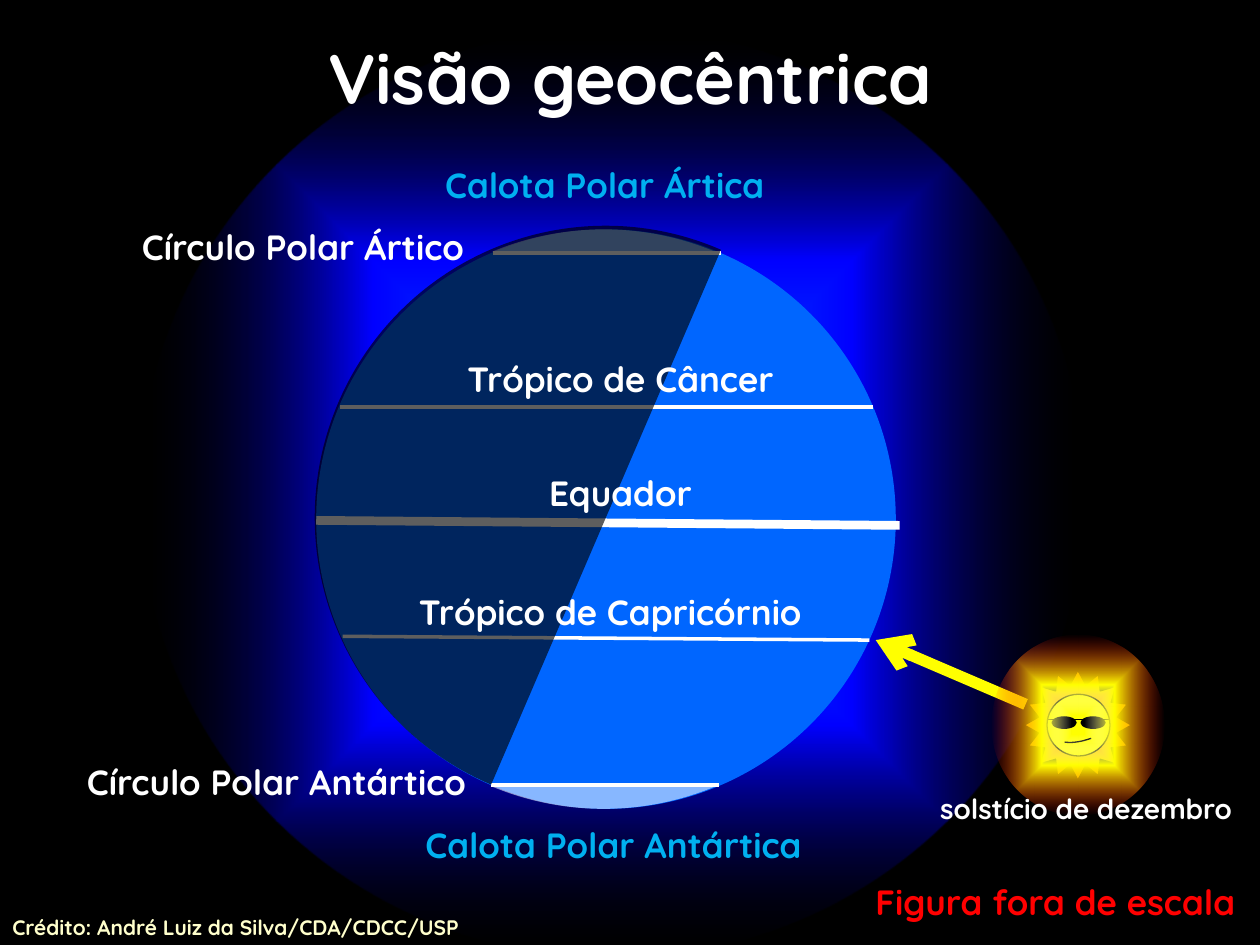
from lxml.etree import SubElement
from pptx import Presentation
from pptx.dml.color import RGBColor
from pptx.enum.shapes import MSO_CONNECTOR, MSO_SHAPE as SHAPE
from pptx.enum.text import MSO_ANCHOR as ANCHOR, MSO_AUTO_SIZE as AUTO, PP_ALIGN as ALIGN
from pptx.oxml.ns import qn
from pptx.util import Inches, Pt

BLACK = RGBColor(0, 0, 0)
WHITE = RGBColor(255, 255, 255)
OCEAN = RGBColor(0x00, 0x66, 0xFF)
BLUE = RGBColor(0, 0, 255)
SKY = RGBColor(0x00, 0xB0, 0xF0)
YELLOW = RGBColor(255, 255, 0)
AMBER = RGBColor(0xFF, 0xC0, 0x00)
RED = RGBColor(255, 0, 0)
CREAM = RGBColor(0xFF, 0xFF, 0xCC)


def set_alpha(color, percent):
    SubElement(color, qn("a:alpha"), val=str(percent * 1000))


class Sketch:
    font = "Quicksand"

    def __init__(self, page):
        self.page = page
        self.shapes = page.shapes

    def style_text(self, frame, text, size, color, align):
        frame.text = text
        para = frame.paragraphs[0]
        para.alignment = align
        para.font.name = self.font
        para.font.size = Pt(size)
        para.font.bold = True
        para.font.color.rgb = color

    def title(self, text, left, top, width, height):
        box = self.page.shapes.title
        box.left, box.top = Inches(left), Inches(top)
        box.width, box.height = Inches(width), Inches(height)
        box.text_frame.vertical_anchor = ANCHOR.MIDDLE
        self.style_text(box.text_frame, text, 40, WHITE, ALIGN.CENTER)
        # Bring the title in front of the sky glow
        self.page.shapes._spTree.append(box._element)

    def label(self, text, left, top, width=4.57, height=0.44, size=20,
              color=WHITE, align=ALIGN.CENTER):
        box = self.shapes.add_textbox(Inches(left), Inches(top), Inches(width), Inches(height))
        box.text_frame.word_wrap = True
        box.text_frame.auto_size = AUTO.SHAPE_TO_FIT_TEXT
        self.style_text(box.text_frame, text, size, color, align)

    def shape(self, kind, left, top, width, height, fill=None, alpha=None,
              outline=None, adjust=(), rotation=0):
        shape = self.shapes.add_shape(kind, Inches(left), Inches(top), Inches(width), Inches(height))
        shape.shadow.inherit = False
        shape.rotation = rotation
        for index, value in enumerate(adjust):
            shape.adjustments[index] = value
        if fill is None:
            shape.fill.background()
        else:
            shape.fill.solid()
            shape.fill.fore_color.rgb = fill
        if alpha is not None:
            set_alpha(shape._element.spPr.find(".//" + qn("a:srgbClr")), alpha)
        if outline is None:
            shape.line.fill.background()
        else:
            shape.line.color.rgb = outline
            shape.line.width = Pt(0.75)
        return shape

    def glow(self, left, top, width, height, stops):
        """Ellipse with a centred gradient; stops are (percent, colour, opacity)."""
        shape = self.shape(SHAPE.OVAL, left, top, width, height)
        properties = shape._element.spPr
        gradient = SubElement(properties, qn("a:gradFill"), rotWithShape="1")
        stop_list = SubElement(gradient, qn("a:gsLst"))
        for position, color, opacity in stops:
            stop = SubElement(stop_list, qn("a:gs"), pos=str(position * 1000))
            set_alpha(SubElement(stop, qn("a:srgbClr"), val=str(color)), opacity)
        route = SubElement(gradient, qn("a:path"), path="shape")
        SubElement(route, qn("a:fillToRect"), l="50000", t="50000", r="50000", b="50000")
        properties.replace(properties.find(qn("a:noFill")), gradient)

    def line(self, start, end, color=WHITE, width=2, arrow=False):
        points = [Inches(value) for value in (*start, *end)]
        line = self.shapes.add_connector(MSO_CONNECTOR.STRAIGHT, *points)
        line.line.color.rgb = color
        line.line.width = Pt(width)
        if arrow:
            SubElement(line.line._get_or_add_ln(), qn("a:tailEnd"), type="arrow")
        SubElement(line._element.spPr, qn("a:effectLst"))

    def curve(self, points, color, width, steps=12):
        """Open cubic Bézier curve through its four control points."""
        trace = []
        for step in range(steps + 1):
            t = step / steps
            weights = ((1 - t) ** 3, 3 * t * (1 - t) ** 2, 3 * t * t * (1 - t), t ** 3)
            trace.append(tuple(Inches(sum(w * p[axis] for w, p in zip(weights, points)))
                               for axis in (0, 1)))
        builder = self.shapes.build_freeform(*trace[0])
        builder.add_line_segments(trace[1:], close=False)
        shape = builder.convert_to_shape()
        shape.shadow.inherit = False
        shape.fill.background()
        shape.line.color.rgb = color
        shape.line.width = Pt(width)

    def sun(self):
        self.shapes = self.page.shapes.add_group_shape().shapes
        self.shape(SHAPE.STAR_16_POINT, 8.13, 5.32, 0.85, 0.87, AMBER, outline=BLACK, adjust=[0.375])
        self.shape(SHAPE.OVAL, 8.31, 5.51, 0.5, 0.49, YELLOW, outline=BLACK)
        self.curve([(8.45, 5.89), (8.53, 5.9), (8.6, 5.88), (8.66, 5.86)], BLACK, 0.75)
        for lens_left in (8.35, 8.58):
            self.shape(SHAPE.OVAL, lens_left, 5.69, 0.19, 0.09, BLACK, outline=BLACK)
        self.line((8.31, 5.71), (8.81, 5.71), BLACK, 0.75)
        self.glow(7.87, 5.04, 1.37, 1.43, [(7, WHITE, 0), (42, YELLOW, 100), (100, RED, 0)])
        self.shapes = self.page.shapes


def main():
    deck = Presentation()
    deck.slide_width, deck.slide_height = Inches(10), Inches(7.5)
    page = deck.slides.add_slide(deck.slide_layouts[5])
    page.background.fill.solid()
    page.background.fill.fore_color.rgb = BLACK
    sketch = Sketch(page)

    # Sky and Earth
    sketch.glow(1.11, 0.22, 7.5, 7.39, [(0, OCEAN, 100), (50, BLUE, 100), (100, BLACK, 5)])
    sketch.shape(SHAPE.OVAL, 2.51, 1.82, 4.6, 4.6, OCEAN)

    # Equator, tropics and polar circles
    sketch.line((2.51, 4.13), (7.14, 4.17), width=5)
    for start, end in [((2.7, 3.23), (6.93, 3.23)), ((2.72, 5.05), (6.9, 5.08)),
                       ((3.91, 2.01), (5.72, 2.01)), ((3.9, 6.23), (5.71, 6.23))]:
        sketch.line(start, end)
    sketch.label("Círculo Polar Ártico", 0.12, 1.74)
    sketch.label("Círculo Polar Antártico", -0.09, 5.99)

    # Polar caps
    for rotation, first_angle in ((0, 40.233), (180, 40.457)):
        sketch.shape(SHAPE.CHORD, 2.49, 1.82, 4.6, 4.6, WHITE, alpha=53,
                     adjust=[first_angle, 67.779], rotation=rotation)
    sketch.label("Calota Polar Antártica", 3.1, 6.49, 3.54, color=SKY)
    sketch.label("Calota Polar Ártica", 3.03, 1.25, 3.54, color=SKY)

    # Sunlight and night side
    sketch.line((8.14, 5.59), (6.95, 5.08), YELLOW, 6.5, arrow=True)
    sketch.sun()
    night = sketch.shape(SHAPE.CHORD, 2.5, 1.79, 4.6, 4.62, BLACK, alpha=63,
                         adjust=[53.673, 162.02], rotation=203)
    night._element.spPr.xfrm.set("flipH", "1")

    sketch.label("Trópico de Câncer", 2.64, 2.79)
    sketch.label("Trópico de Capricórnio", 2.56, 4.64)
    sketch.label("Equador", 2.64, 3.69)
    sketch.title("Visão geocêntrica", 0, -0.02, 10, 1.25)
    sketch.label("Figura fora de escala", 6.85, 6.94, 3.54, color=RED, align=ALIGN.LEFT)
    sketch.label("solstício de dezembro", 7.28, 6.23, 2.68, 0.37, size=16)
    sketch.label("Crédito: André Luiz da Silva/CDA/CDCC/USP", 0, 7.21, 6.03, 0.3,
                 size=12, color=CREAM, align=ALIGN.LEFT)
    deck.save("out.pptx")


if __name__ == "__main__":
    main()
